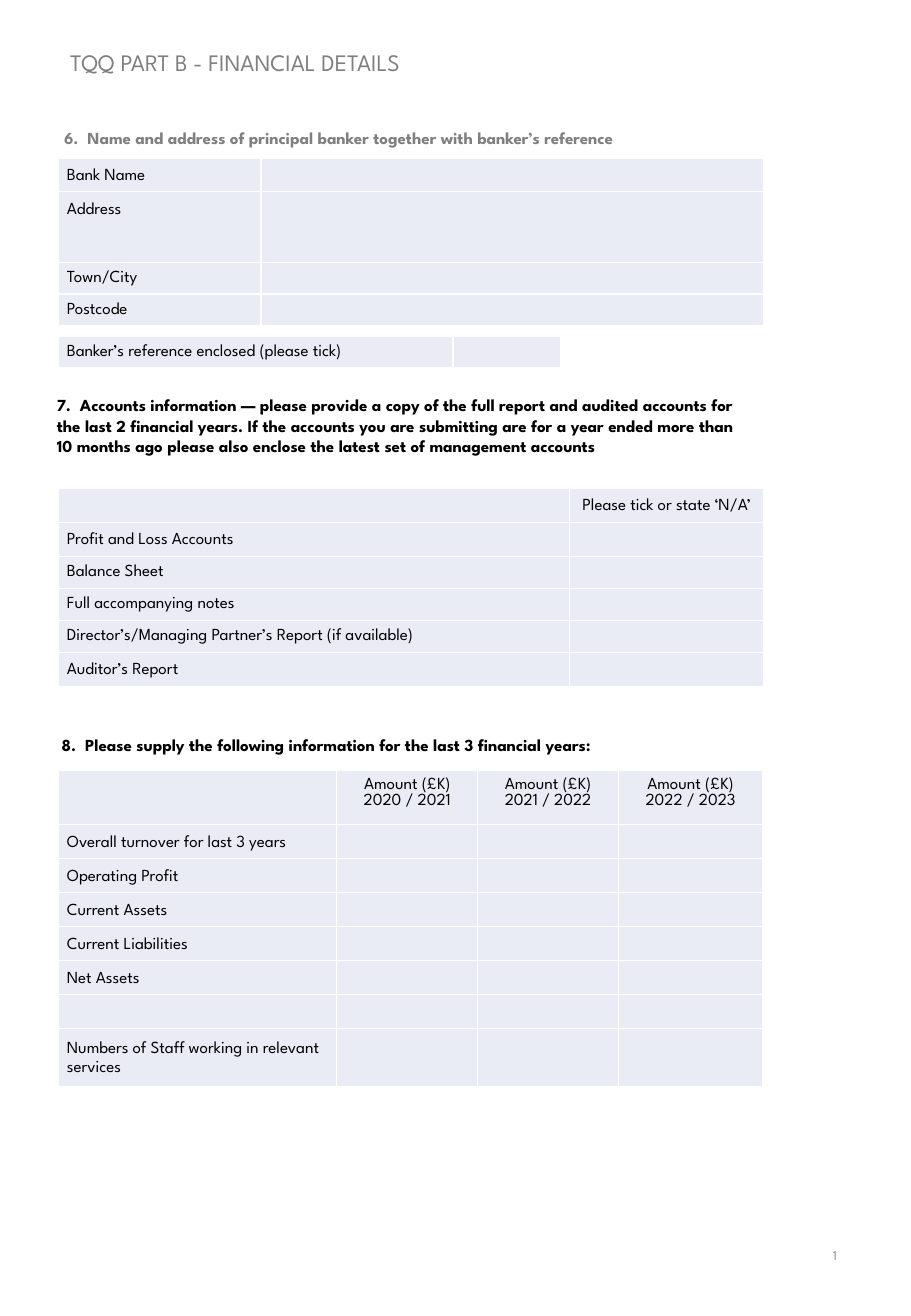
import dataclasses
import pptx
import pptx.dml.color
import pptx.enum.text
import pptx.oxml
import pptx.oxml.ns
import pptx.util

Cm = pptx.util.Cm
Pt = pptx.util.Pt
Align = pptx.enum.text.PP_ALIGN
Anchor = pptx.enum.text.MSO_ANCHOR

FONT = "League Spartan"
COLORS = {"ink": "000000", "gray": "808080", "page": "8C8C8C",
          "cell": "E9EBF5", "edge": "FFFFFF"}
LEFT = 1.22


@dataclasses.dataclass
class Label:
    text: str
    x: float
    y: float
    w: float
    h: float
    size: float = 10
    color: str = "ink"
    bold: bool = False
    align: Align = Align.LEFT
    anchor: Anchor = Anchor.TOP
    space: float = 1.0


@dataclasses.dataclass
class Entry:
    lines: tuple[str, ...] = ()
    align: Align = Align.LEFT
    anchor: Anchor = Anchor.MIDDLE
    top: float = 0.1
    space: float = 1.2


@dataclasses.dataclass
class Grid:
    y: float
    cols: list[float]
    rows: list[float]
    cells: dict[tuple[int, int], Entry]


def rgb(name: str) -> pptx.dml.color.RGBColor:
    return pptx.dml.color.RGBColor.from_string(COLORS[name])


def add_run(para, text: str, size: float, color: str, bold: bool = False) -> None:
    run = para.add_run()
    run.text = text
    run.font.name = FONT
    run.font.size = Pt(size)
    run.font.bold = bold
    run.font.color.rgb = rgb(color)


def add_label(slide, label: Label) -> None:
    box = slide.shapes.add_textbox(Cm(label.x), Cm(label.y), Cm(label.w), Cm(label.h))
    frame = box.text_frame
    frame.word_wrap = True
    frame.vertical_anchor = label.anchor
    para = frame.paragraphs[0]
    para.alignment = label.align
    para.line_spacing = label.space
    add_run(para, label.text, label.size, label.color, label.bold)


def add_edges(cell) -> None:
    props = cell._tc.get_or_add_tcPr()
    for index, side in enumerate(("lnL", "lnR", "lnT", "lnB")):
        props.insert(index, pptx.oxml.parse_xml(
            f'<a:{side} {pptx.oxml.ns.nsdecls("a")} w="{Pt(1)}"><a:solidFill>'
            f'<a:srgbClr val="{COLORS["edge"]}"/></a:solidFill></a:{side}>'))


def fill_cell(cell, entry: Entry) -> None:
    cell.fill.solid()
    cell.fill.fore_color.rgb = rgb("cell")
    add_edges(cell)
    cell.margin_left = cell.margin_right = Cm(0.18)
    cell.margin_top, cell.margin_bottom = Cm(entry.top), Cm(0.1)
    cell.vertical_anchor = entry.anchor
    frame = cell.text_frame
    for index, line in enumerate(entry.lines):
        para = frame.add_paragraph() if index else frame.paragraphs[0]
        para.alignment = entry.align
        para.line_spacing = 1.0 if index else entry.space
        add_run(para, line, 10, "ink")
    if not entry.lines:
        # Small text size keeps empty rows from growing
        frame.paragraphs[0]._p.append(pptx.oxml.parse_xml(
            f'<a:endParaRPr {pptx.oxml.ns.nsdecls("a")} sz="1000"/>'))


def add_grid(slide, grid: Grid) -> None:
    table = slide.shapes.add_table(
        len(grid.rows), len(grid.cols), Cm(LEFT), Cm(grid.y),
        Cm(sum(grid.cols)), Cm(sum(grid.rows))).table
    table.first_row = table.horz_banding = False
    for col, width in zip(table.columns, grid.cols):
        col.width = Cm(width)
    for row, height in zip(table.rows, grid.rows):
        row.height = Cm(height)
    for r in range(len(grid.rows)):
        for c in range(len(grid.cols)):
            fill_cell(table.cell(r, c), grid.cells.get((r, c), Entry()))


def stack(names: list[str], first: int = 0, space: float = 1.2) -> dict[tuple[int, int], Entry]:
    return {(r, 0): Entry((name,), space=space)
            for r, name in enumerate(names, first) if name}


# Headings and page number
LABELS = [
    Label("TQQ PART B - FINANCIAL DETAILS", 1.22, 0.76, 12.52, 0.91, 14, "gray", space=1.2),
    Label("6.  Name and address of principal banker together with banker’s reference",
          1.09, 2.54, 16.43, 0.69, color="gray", bold=True),
    Label("7.  Accounts information — please provide a copy of the full report and audited "
          "accounts for the last 2 financial years. If the accounts you are submitting are "
          "for a year ended more than 10 months ago please also enclose the latest set of "
          "management accounts", 0.94, 8.13, 15.04, 1.96, bold=True),
    Label("8.  Please supply the following information for the last 3 financial years:",
          1.04, 15.24, 14.55, 0.69, bold=True),
    Label("1", 13.46, 25.5, 4.29, 1.47, 8, "page", align=Align.RIGHT, anchor=Anchor.MIDDLE),
]

# Banker details
BANK = stack(["Bank Name"]) | stack(["Town/City", "Postcode"], 2, 1.0)
BANK[1, 0] = Entry(("Address",), anchor=Anchor.TOP, top=0.22, space=1.0)
TICK = stack(["Banker’s reference enclosed (please tick)"], space=1.0)

# Accounts checklist
REPORTS = stack(["Profit and Loss Accounts"], 1) | stack(
    ["Balance Sheet", "Full accompanying notes",
     "Director’s/Managing Partner’s Report (if available)"], 2, 1.0) | stack(
    ["Auditor’s Report"], 5)
REPORTS[0, 1] = Entry(("Please tick or state ‘N/A’",), Align.CENTER)

# Figures by year
YEARS = stack(["Overall turnover for last 3 years", "Operating Profit", "Current Assets",
               "Current Liabilities", "Net Assets", "",
               "Numbers of Staff working in relevant services"], 1)
for col, year in enumerate(range(2020, 2023), 1):
    YEARS[0, col] = Entry(("Amount (£K)", f"{year} / {year + 1}"), Align.CENTER, Anchor.TOP)

GRIDS = [
    Grid(3.3, [4.24, 10.5], [0.7, 1.48, 0.66, 0.66], BANK),
    Grid(7.04, [8.25, 2.25], [0.64], TICK),
    Grid(10.21, [10.69, 4.06], [0.69, 0.7, 0.67, 0.67, 0.67, 0.7], REPORTS),
    Grid(16.1, [5.82, 2.95, 2.94, 3.02], [1.14] + [0.71] * 6 + [1.2], YEARS),
]


def main() -> None:
    deck = pptx.Presentation()
    deck.slide_width, deck.slide_height = Cm(19.05), Cm(27.51)
    slide = deck.slides.add_slide(deck.slide_layouts[6])
    for label in LABELS:
        add_label(slide, label)
    for grid in GRIDS:
        add_grid(slide, grid)
    deck.save("out.pptx")


if __name__ == "__main__":
    main()
